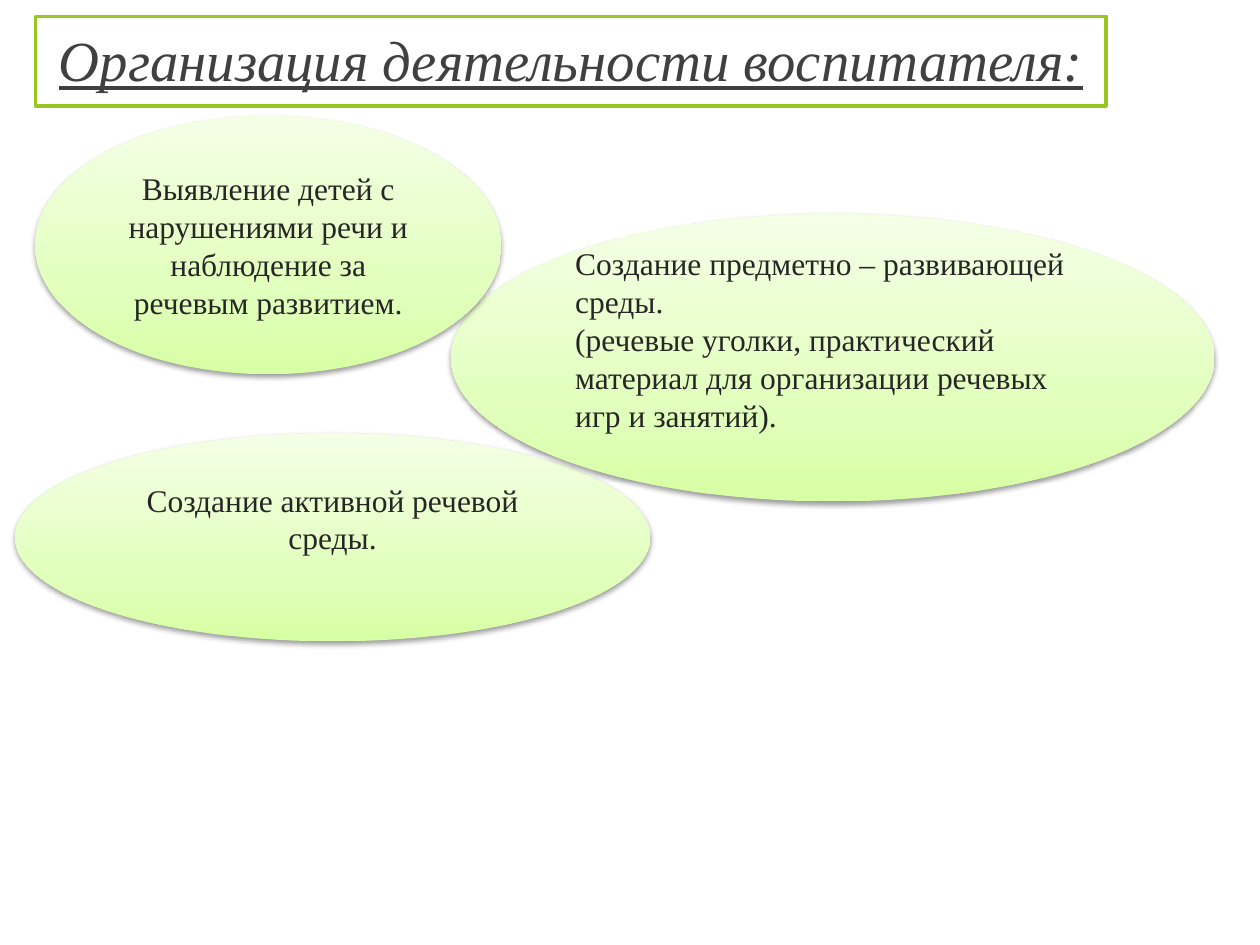
"""Build a slide with a framed title and three shaded ellipses on the educator's work."""
from copy import deepcopy

from lxml import etree
from pptx import Presentation
from pptx.dml.color import RGBColor
from pptx.enum.shapes import MSO_SHAPE
from pptx.enum.text import MSO_ANCHOR, MSO_AUTO_SIZE, PP_ALIGN
from pptx.oxml.ns import qn
from pptx.util import Pt

ELLIPSE = MSO_SHAPE.OVAL
MIDDLE = MSO_ANCHOR.MIDDLE
NO_AUTOFIT = MSO_AUTO_SIZE.NONE
CENTER, LEFT = PP_ALIGN.CENTER, PP_ALIGN.LEFT

COLORS = {"white": "FFFFFF", "frame": "98C723", "title": "404040", "text": "262626",
          "deep": "D7FFA4", "mid": "E2FFBE", "pale": "F4FFE6", "shadow": "000000"}
GRADIENT = [(0, "deep"), (0.35, "mid"), (1, "pale")]
SHADOW = {"blurRad": Pt(3.1), "dist": Pt(1.6), "dir": 90 * 60000, "rotWithShape": 0}
SHADOW_OPACITY = 38000

TITLE = "Организация деятельности воспитателя:"
TITLE_BOX = (20.16, 9.36, 612, 51.12)
TITLE_FONT = {"name": "Times New Roman", "size": Pt(32.4), "bold": False,
              "italic": True, "underline": True}
BODY_FONT = {"name": "Times New Roman", "size": Pt(18)}
TITLE_INSET, PLAIN_INSET, RAISED_INSET = 6, 3.6, 25.2

ELLIPSES = [
    {"box": (8.64, 247.68, 362.88, 118.8), "align": CENTER, "inset": RAISED_INSET,
     "lines": ["Создание активной речевой среды."]},
    {"box": (257.76, 122.4, 436.32, 164.16), "align": LEFT, "inset": RAISED_INSET,
     "lines": ["Создание предметно – развивающей среды.",
               "(речевые уголки, практический материал для организации речевых игр и занятий)."]},
    {"box": (20.16, 66.24, 266.4, 147.6), "align": CENTER, "inset": PLAIN_INSET,
     "lines": ["Выявление детей с нарушениями речи и наблюдение за речевым развитием."]},
]


def rgb(name):
    return RGBColor.from_string(COLORS[name])


def set_attributes(target, values):
    for name, value in values.items():
        setattr(target, name, value)


def write_text(shape, lines, align, inset, font, color):
    frame = shape.text_frame
    set_attributes(frame, {"word_wrap": True, "auto_size": NO_AUTOFIT,
                           "vertical_anchor": MIDDLE, "margin_bottom": Pt(inset)})
    frame.text = "\n".join(lines)
    for paragraph in frame.paragraphs:
        set_attributes(paragraph, {"alignment": align, "space_before": Pt(0),
                                   "line_spacing": 1.0})
        set_attributes(paragraph.runs[0].font, font)
        paragraph.runs[0].font.color.rgb = rgb(color)


def shade(shape):
    shape.fill.gradient()
    shape.fill.gradient_angle = 90
    stop_list = shape.element.spPr.find(".//" + qn("a:gsLst"))
    stop_list.append(deepcopy(stop_list[0]))
    for stop, (position, color) in zip(shape.fill.gradient_stops, GRADIENT):
        stop.position = position
        stop.color.rgb = rgb(color)


def cast_shadow(shape):
    shape.shadow.inherit = False
    effects = shape.element.spPr.find(qn("a:effectLst"))
    shadow = etree.SubElement(effects, qn("a:outerShdw"),
                              {name: str(value) for name, value in SHADOW.items()})
    color = etree.SubElement(shadow, qn("a:srgbClr"), val=COLORS["shadow"])
    etree.SubElement(color, qn("a:alpha"), val=str(SHADOW_OPACITY))


def add_title(slide):
    title = slide.shapes.title
    set_attributes(title, dict(zip(("left", "top", "width", "height"), map(Pt, TITLE_BOX))))
    title.fill.solid()
    title.fill.fore_color.rgb = rgb("white")
    title.line.color.rgb = rgb("frame")
    title.line.width = Pt(2)
    write_text(title, [TITLE], CENTER, TITLE_INSET, TITLE_FONT, "title")


def add_ellipse(slide, item):
    shape = slide.shapes.add_shape(ELLIPSE, *map(Pt, item["box"]))
    shape.line.fill.background()
    shade(shape)
    cast_shadow(shape)
    write_text(shape, item["lines"], item["align"], item["inset"], BODY_FONT, "text")


def main():
    presentation = Presentation()
    set_attributes(presentation, {"slide_width": Pt(720), "slide_height": Pt(540)})
    slide = presentation.slides.add_slide(presentation.slide_layouts[5])
    add_title(slide)
    for item in ELLIPSES:
        add_ellipse(slide, item)
    presentation.save("out.pptx")


if __name__ == "__main__":
    main()
